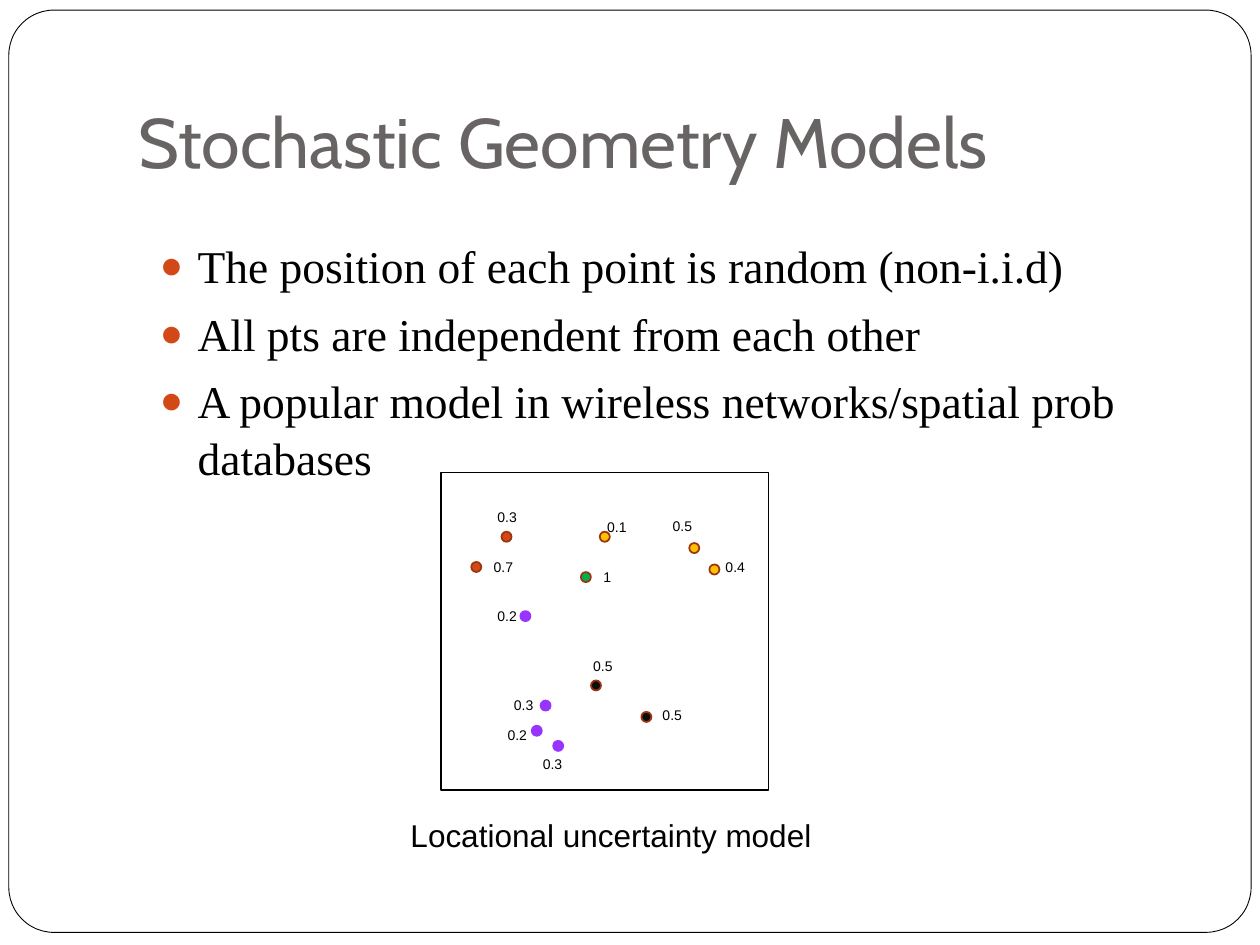
"""Build the slide on stochastic geometry models."""
import pptx
import pptx.dml.color
import pptx.enum.shapes
import pptx.enum.text
import pptx.oxml
import pptx.oxml.ns
import pptx.util

Inches = pptx.util.Inches
Pt = pptx.util.Pt
RGBColor = pptx.dml.color.RGBColor
Shapes = pptx.enum.shapes.MSO_SHAPE
Anchor = pptx.enum.text.MSO_ANCHOR

BLACK = RGBColor(0x00, 0x00, 0x00)
WHITE = RGBColor(0xFF, 0xFF, 0xFF)
GRAY = RGBColor(0x69, 0x64, 0x64)
BROWN = RGBColor(0x9C, 0x35, 0x11)
RED = RGBColor(0xD3, 0x48, 0x17)
AMBER = RGBColor(0xFF, 0xC0, 0x00)
GREEN = RGBColor(0x00, 0xB0, 0x50)
PURPLE = RGBColor(0x99, 0x33, 0xFF)
INK = RGBColor(0x0D, 0x0D, 0x0D)

TITLE = "Stochastic Geometry Models"
BULLETS = [
    "The position of each point is random (non-i.i.d)",
    "All pts are independent from each other",
    "A popular model in wireless networks/spatial prob databases",
]
CAPTION = "Locational uncertainty model"

# Each location: dot left and top, label left and top, probability.
POINT_GROUPS = [
    (RED, BROWN, [(3.98, 4.22, 3.85, 3.99, "0.3"), (3.74, 4.46, 3.82, 4.38, "0.7")]),
    (AMBER, BROWN, [(4.76, 4.22, 4.72, 4.07, "0.1"), (5.47, 4.31, 5.24, 4.06, "0.5"),
                    (5.63, 4.48, 5.66, 4.38, "0.4")]),
    (GREEN, BROWN, [(4.61, 4.54, 4.69, 4.46, "1")]),
    (INK, BROWN, [(4.69, 5.4, 4.61, 5.17, "0.5"), (5.09, 5.65, 5.16, 5.56, "0.5")]),
    (PURPLE, PURPLE, [(4.13, 4.85, 3.85, 4.77, "0.2"), (4.29, 5.56, 3.98, 5.48, "0.3"),
                      (4.22, 5.76, 3.93, 5.72, "0.2"), (4.39, 5.88, 4.21, 5.95, "0.3")]),
]
DOT_SIZE = 0.08
LABEL_SIZE = (0.36, 0.24)

TITLE_FONT = {"name": "Cabin", "size": Pt(40), "bold": False}
BODY_FONT = {"name": "Times New Roman", "size": Pt(26)}
LABEL_FONT = {"name": "Arial", "size": Pt(8)}
CAPTION_FONT = {"name": "Arial", "size": Pt(18)}


def set_attributes(target, values):
    for name, value in values.items():
        setattr(target, name, value)


def write_text(paragraph, text, font, color=BLACK):
    run = paragraph.add_run()
    run.text = text
    set_attributes(run.font, font)
    run.font.color.rgb = color


def add_outline(slide, kind, box, fill, line, width):
    shape = slide.shapes.add_shape(kind, *map(Inches, box))
    shape.shadow.inherit = False
    if fill is None:
        shape.fill.background()
    else:
        shape.fill.solid()
        shape.fill.fore_color.rgb = fill
    shape.line.color.rgb = line
    shape.line.width = Pt(width)
    return shape


def add_text(slide, box, text, font):
    frame = slide.shapes.add_textbox(*map(Inches, box)).text_frame
    frame.word_wrap = True
    write_text(frame.paragraphs[0], text, font)


def add_bullet(paragraph, text):
    write_text(paragraph, text, BODY_FONT)
    set_attributes(paragraph, {"space_before": Pt(5.8), "line_spacing": 1.05})
    properties = paragraph._p.get_or_add_pPr()
    properties.set("marL", str(Inches(0.3)))
    properties.set("indent", str(-Inches(0.3)))
    namespace = pptx.oxml.ns.nsdecls("a")
    for xml in (
        f'<a:buClr {namespace}><a:srgbClr val="{RED}"/></a:buClr>',
        f'<a:buSzPct {namespace} val="85000"/>',
        f'<a:buFont {namespace} typeface="Arial"/>',
        f'<a:buChar {namespace} char="●"/>',
    ):
        properties.append(pptx.oxml.parse_xml(xml))


def add_title(slide):
    title = slide.shapes.title
    set_attributes(title, {"left": Inches(1), "top": Inches(0.3),
                           "width": Inches(8.5), "height": Inches(1.25)})
    set_attributes(title.text_frame, {"vertical_anchor": Anchor.BOTTOM, "word_wrap": True,
                                      "margin_bottom": Inches(0.1)})
    paragraph = title.text_frame.paragraphs[0]
    paragraph.alignment = pptx.enum.text.PP_ALIGN.LEFT
    write_text(paragraph, TITLE, TITLE_FONT, GRAY)


def add_body(slide):
    frame = slide.shapes.add_textbox(*map(Inches, (1.17, 1.82, 8.5, 1.52))).text_frame
    frame.word_wrap = True
    for index, text in enumerate(BULLETS):
        add_bullet(frame.add_paragraph() if index else frame.paragraphs[0], text)


def add_model(slide):
    add_outline(slide, Shapes.RECTANGLE, (3.5, 3.75, 2.6, 2.52), None, BLACK, 1)
    for fill, line, points in POINT_GROUPS:
        for left, top, label_left, label_top, probability in points:
            add_outline(slide, Shapes.OVAL, (left, top, DOT_SIZE, DOT_SIZE), fill, line, 1)
            add_text(slide, (label_left, label_top, *LABEL_SIZE), probability, LABEL_FONT)
    add_text(slide, (3.16, 6.43, 3.86, 0.4), CAPTION, CAPTION_FONT)


def main():
    presentation = pptx.Presentation()
    set_attributes(presentation, {"slide_width": Inches(10), "slide_height": Inches(7.5)})
    slide = presentation.slides.add_slide(presentation.slide_layouts[5])
    frame = add_outline(slide, Shapes.ROUNDED_RECTANGLE, (0.07, 0.08, 9.86, 7.32), WHITE, BLACK, 0.5)
    frame.adjustments[0] = 0.049
    slide.shapes._spTree.insert(2, frame._element)
    add_title(slide)
    add_body(slide)
    add_model(slide)
    presentation.save("out.pptx")


if __name__ == "__main__":
    main()
